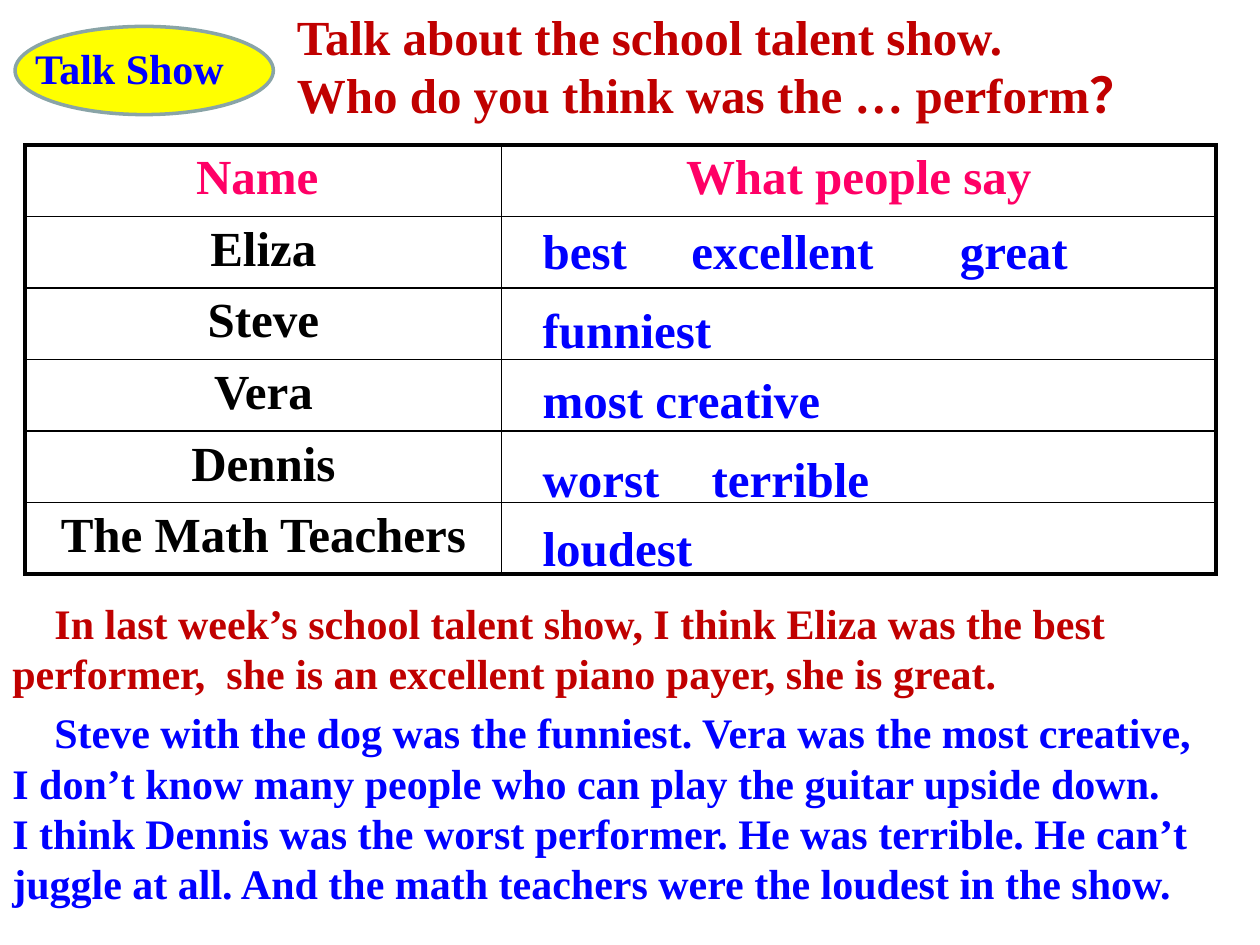
from dataclasses import dataclass
from lxml.etree import SubElement
from pptx import Presentation
from pptx.dml.color import RGBColor as RGB
from pptx.enum.shapes import MSO_SHAPE as SHAPE
from pptx.enum.text import MSO_AUTO_SIZE as FIT, PP_ALIGN as ALIGN
from pptx.oxml.ns import qn
from pptx.util import Pt


@dataclass(frozen=True)
class Theme:
    font: str = "Times New Roman"
    large: float = 28
    medium: float = 24
    red: str = "C00000"
    blue: str = "0000FF"
    pink: str = "FF0066"
    black: str = "000000"
    yellow: str = "FFFF00"
    outline: str = "89A4A7"
    thick: float = 2.25
    thin: float = 1


T = Theme()
NAMES = ["Eliza", "Steve", "Vera", "Dennis", "The Math Teachers"]
OPINIONS = [
    (122.4, [("best", 303, 65), ("excellent", 388, 120), ("great", 541.5, 77)]),
    (167.8, [("funniest", 303, 112)]),
    (207.4, [("most creative", 303, 174)]),
    (252.7, [("worst", 303, 82), ("terrible", 399.6, 105)]),
    (292.3, [("loudest", 303, 102)]),
]


def add_run(p, text, size, color):
    r = p.add_run()
    r.text = text
    r.font.name = T.font
    r.font.size = Pt(size)
    r.font.bold = True
    r.font.color.rgb = RGB.from_string(color)


def add_text(shapes, box, lines, size, color, wrap=True, margin=7.2, indent=0):
    sp = shapes.add_textbox(*map(Pt, box))
    tf = sp.text_frame
    tf.word_wrap = wrap
    tf.auto_size = FIT.SHAPE_TO_FIT_TEXT
    tf.margin_left = Pt(margin)
    for i, line in enumerate(lines):
        p = tf.add_paragraph() if i else tf.paragraphs[0]
        p.alignment = ALIGN.LEFT
        if indent and i == 0:
            p._p.get_or_add_pPr().set("indent", str(Pt(indent)))
        add_run(p, line, size, color)


def set_borders(cell, widths):
    tcPr = cell._tc.get_or_add_tcPr()
    for i, (side, width) in enumerate(widths.items()):
        ln = SubElement(tcPr, qn(f"a:ln{side}"), w=str(Pt(width)))
        fill = SubElement(ln, qn("a:solidFill"))
        SubElement(fill, qn("a:srgbClr"), val=T.black)
        tcPr.remove(ln)
        tcPr.insert(i, ln)


def add_grid(s, rows, left, top, col_widths, row_height):
    n, m = len(rows), len(col_widths)
    frame = s.shapes.add_table(n, m, Pt(left), Pt(top),
                               Pt(sum(col_widths)), Pt(n * row_height))
    tbl = frame.table
    tbl.first_row = tbl.horz_banding = False
    for col, width in zip(tbl.columns, col_widths):
        col.width = Pt(width)
    for i, texts in enumerate(rows):
        tbl.rows[i].height = Pt(row_height)
        for j, text in enumerate(texts):
            cell = tbl.cell(i, j)
            cell.fill.background()
            edges = {"L": j == 0, "R": j == m - 1, "T": i == 0, "B": i == n - 1}
            set_borders(cell, {side: T.thick if outer else T.thin
                               for side, outer in edges.items()})
            p = cell.text_frame.paragraphs[0]
            p.alignment = ALIGN.CENTER
            if text:
                add_run(p, text, T.large, T.black if i else T.pink)


def add_badge(s, text):
    group = s.shapes.add_group_shape()
    sp = group.shapes.add_shape(SHAPE.OVAL, Pt(8.6), Pt(15.1), Pt(147.6), Pt(50.4))
    sp.shadow.inherit = False
    sp.fill.solid()
    sp.fill.fore_color.rgb = RGB.from_string(T.yellow)
    sp.line.color.rgb = RGB.from_string(T.outline)
    sp.line.width = Pt(2)
    add_text(group.shapes, (13, 20.9, 123.1, 36), [text], T.medium, T.blue, wrap=False)


def main():
    prs = Presentation()
    prs.slide_width, prs.slide_height = Pt(720), Pt(540)
    s = prs.slides.add_slide(prs.slide_layouts[6])
    rows = [("Name ", "What people say")] + [(name, "") for name in NAMES]
    add_grid(s, rows, 14.4, 82.8, (272.2, 408.2), 40.9)
    add_text(s.shapes, (155.5, 0, 564.5, 74.2),
             ["Talk about the school talent show.",
              "Who do you think was the … perform？"],
             T.large, T.red, margin=14.2)
    for top, words in OPINIONS:
        for word, left, width in words:
            add_text(s.shapes, (left, top, width, 41), [word], T.large, T.blue)
    add_badge(s, "Talk Show")
    add_text(s.shapes, (0, 337.7, 651.6, 65.5),
             ["In last week’s school talent show, I think Eliza was the best",
              "performer,  she is an excellent piano payer, she is great."],
             T.medium, T.red, wrap=False, indent=24)
    add_text(s.shapes, (0, 400.3, 700.6, 152.6),
             ["Steve with the dog was the funniest. Vera was the most creative,",
              "I don’t know many people who can play the guitar upside down.",
              "I think Dennis was the worst performer. He was terrible. He can’t",
              "juggle at all. And the math teachers were the loudest in the show."],
             T.medium, T.blue, wrap=False, indent=24)
    prs.save("out.pptx")


if __name__ == "__main__":
    main()
